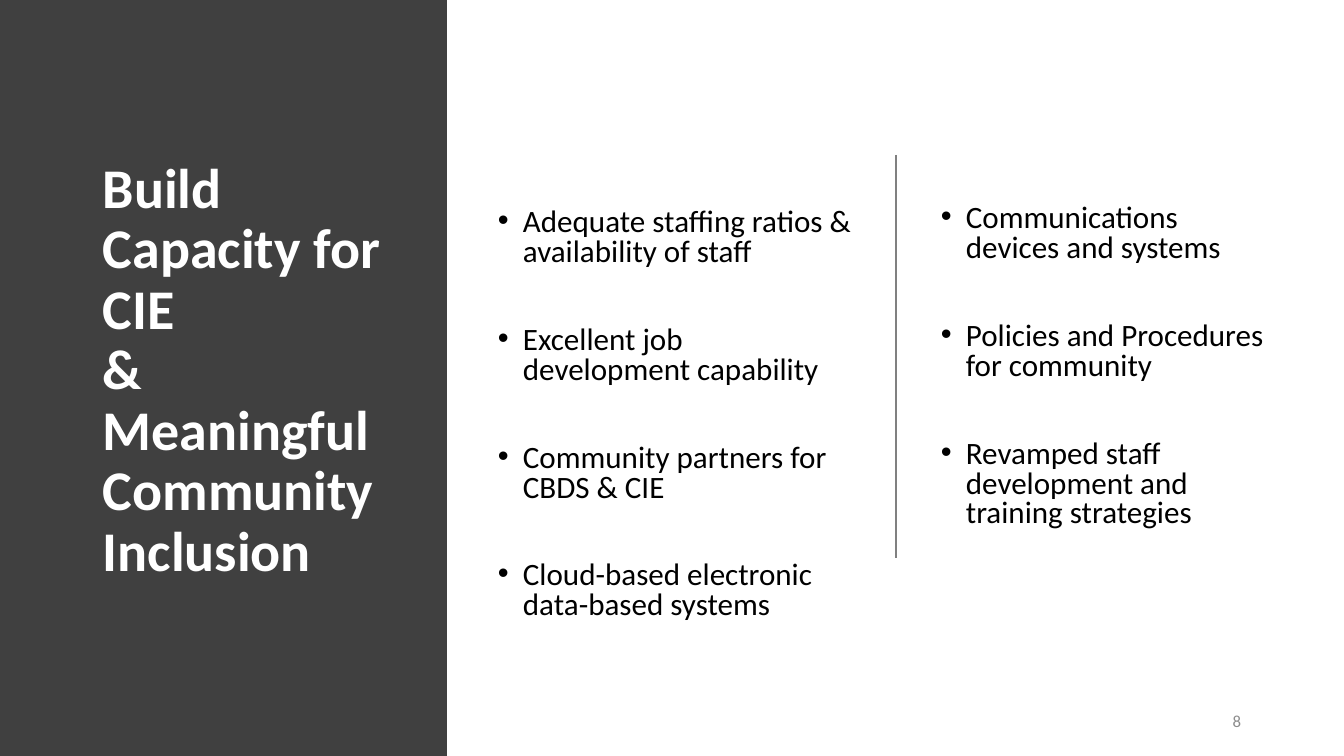
from dataclasses import dataclass

from lxml import etree
from pptx import Presentation
from pptx.dml.color import RGBColor
from pptx.enum.shapes import MSO_CONNECTOR, MSO_SHAPE
from pptx.enum.text import MSO_ANCHOR, PP_ALIGN
from pptx.oxml.ns import qn
from pptx.util import Pt

EMU_PER_PX = 914400 / 100.8
RECTANGLE = MSO_SHAPE.RECTANGLE
STRAIGHT = MSO_CONNECTOR.STRAIGHT
TOP, MIDDLE = MSO_ANCHOR.TOP, MSO_ANCHOR.MIDDLE
LEFT, RIGHT = PP_ALIGN.LEFT, PP_ALIGN.RIGHT


@dataclass(frozen=True)
class Theme:
    font: str = "Calibri"
    panel: str = "404040"
    title: str = "FFFFFF"
    body: str = "000000"
    divider: str = "808080"
    number: str = "8C8C8C"
    title_size: float = 40
    body_size: float = 22.2
    number_size: float = 12
    bullet_indent: int = 25
    bullet_gap: float = 41.4


def px(length):
    return round(length * EMU_PER_PX)


def rgb(value):
    return RGBColor.from_string(value)


class SlideBuilder:
    def __init__(self, deck, theme):
        self.theme = theme
        self.page = deck.slides.add_slide(deck.slide_layouts[6])

    def panel(self, left, top, width, height):
        shape = self.page.shapes.add_shape(RECTANGLE, px(left), px(top), px(width), px(height))
        shape.shadow.inherit = False
        shape.fill.solid()
        shape.fill.fore_color.rgb = rgb(self.theme.panel)
        shape.line.fill.background()

    def divider(self, x, top, bottom):
        line = self.page.shapes.add_connector(STRAIGHT, px(x), px(top), px(x), px(bottom))
        line.line.color.rgb = rgb(self.theme.divider)
        line.line.width = Pt(1)
        etree.SubElement(line._element.spPr, qn("a:effectLst"))

    def text(self, paragraphs, left, top, width, height, *, size, color, bold=False,
             align=LEFT, anchor=TOP, inset_top=5, line_spacing=1.0, gap=0, after=0,
             bullets=False):
        """Add a text box; gap is the space in points between paragraphs."""
        box = self.page.shapes.add_textbox(px(left), px(top), px(width), px(height))
        frame = box.text_frame
        frame.word_wrap = True
        frame.vertical_anchor = anchor
        frame.margin_top = px(inset_top)
        for index, words in enumerate(paragraphs):
            para = frame.add_paragraph() if index else frame.paragraphs[0]
            para.text = words
            para.alignment = align
            para.line_spacing = line_spacing
            para.space_before = Pt(gap if index else 0)
            para.space_after = Pt(after)
            for span in para.runs:
                span.font.name = self.theme.font
                span.font.size = Pt(size)
                span.font.bold = bold
                span.font.color.rgb = rgb(color)
            if bullets:
                self.bullet(para)

    def bullet(self, para):
        properties = para._p.get_or_add_pPr()
        indent = px(self.theme.bullet_indent)
        properties.set("marL", str(indent))
        properties.set("indent", str(-indent))
        etree.SubElement(properties, qn("a:buFont"), typeface="Arial")
        etree.SubElement(properties, qn("a:buChar"), char="•")

    def bullet_list(self, items, left, top, width, height, inset_top):
        self.text(items, left, top, width, height, size=self.theme.body_size,
                  color=self.theme.body, inset_top=inset_top, line_spacing=0.8,
                  gap=self.theme.bullet_gap, bullets=True)


def main():
    deck = Presentation()
    deck.slide_width, deck.slide_height = px(1344), px(756)
    theme = Theme()
    slide = SlideBuilder(deck, theme)

    slide.panel(0, 0, 447, 756)
    slide.text(["Build Capacity for CIE\n& Meaningful Community Inclusion"], 93, 155, 319, 481,
               size=theme.title_size, color=theme.title, bold=True, line_spacing=0.9)
    slide.bullet_list([
        "Adequate staffing ratios & availability of staff",
        "Excellent job development capability",
        "Community partners for CBDS & CIE",
        "Cloud-based electronic data-based systems",
    ], 488, 167, 378, 481, inset_top=42)
    slide.divider(896, 155, 558)
    slide.bullet_list([
        "Communications devices and systems",
        "Policies and Procedures for community",
        "Revamped staff development and training strategies",
    ], 931, 155, 353, 481, inset_top=50)
    slide.text(["8"], 1014, 701, 237, 40, size=theme.number_size, color=theme.number,
               align=RIGHT, anchor=MIDDLE, after=6)
    deck.save("out.pptx")


if __name__ == "__main__":
    main()
